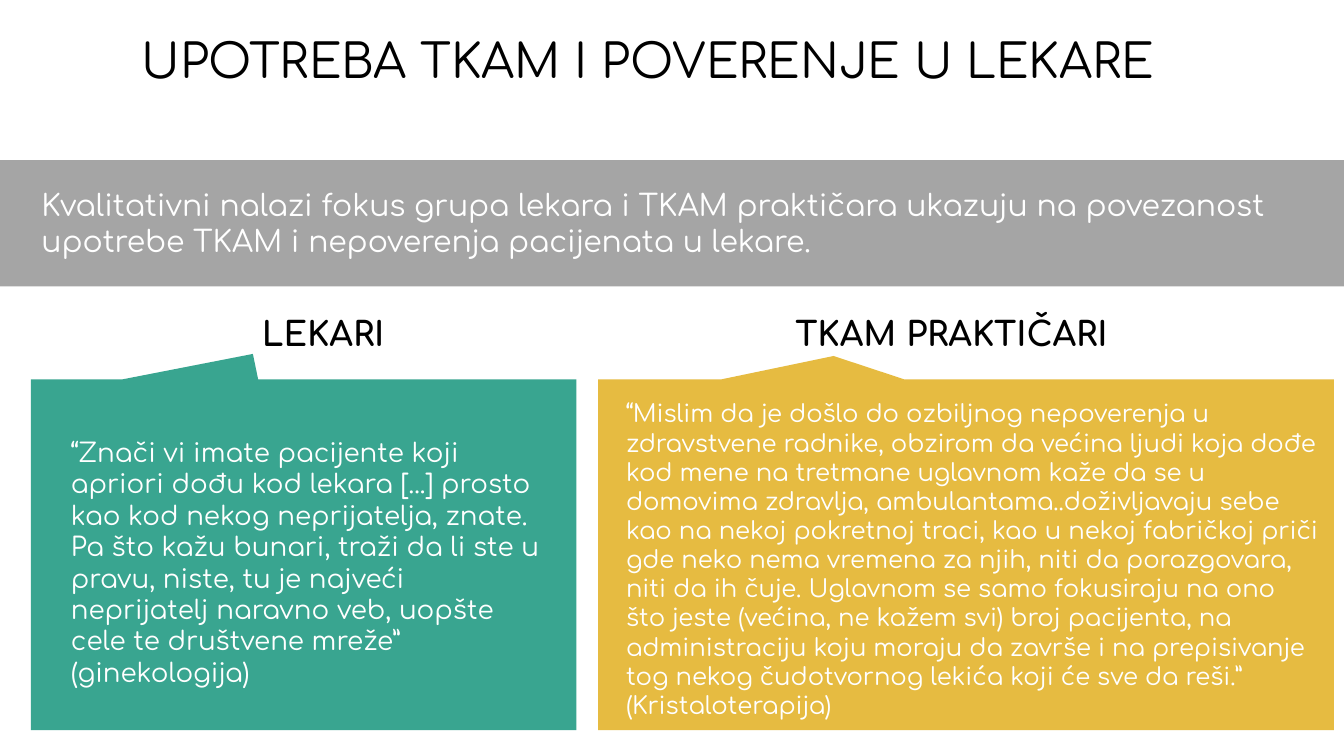
from pptx import Presentation, util as u
from pptx.dml.color import RGBColor
from pptx.enum import shapes, text

COLORS = {"ink": "000000", "paper": "FFFFFF", "band": "A5A5A5",
          "doctors": "39A590", "practitioners": "E6BB41"}

deck = Presentation()
deck.slide_width = u.Inches(10)
deck.slide_height = deck.slide_width * 9 // 16
column, row = deck.slide_width / 100, deck.slide_height / 100
slide = deck.slides.add_slide(deck.slide_layouts[6])


def add_panel(preset, area, color):
    left, top, width, height = area
    panel = slide.shapes.add_shape(preset, int(left * column), int(top * row),
                                   int(width * column), int(height * row))
    panel.shadow.inherit = False
    panel.fill.solid()
    panel.fill.fore_color.rgb = RGBColor.from_string(COLORS[color])
    panel.line.fill.background()
    return panel


def add_words(lines, area, size, color, bold=False, align=text.PP_ALIGN.LEFT):
    left, top, width, height = area
    words = slide.shapes.add_textbox(int(left * column), int(top * row),
                                     int(width * column), int(height * row))
    frame = words.text_frame
    frame.word_wrap = True
    frame.margin_left = frame.margin_right = u.Inches(0.1)
    frame.margin_top = frame.margin_bottom = u.Inches(0.1)
    frame.text = lines
    for paragraph in frame.paragraphs:
        paragraph.alignment = align
        for run in paragraph.runs:
            run.font.name = "Comfortaa"
            run.font.size = u.Pt(size)
            run.font.bold = bold
            run.font.color.rgb = RGBColor.from_string(COLORS[color])


add_words("UPOTREBA TKAM I POVERENJE U LEKARE", (9.55, 2.4, 93.2, 11.2), 25.2, "ink")

add_panel(shapes.MSO_SHAPE.RECTANGLE, (0, 21.2, 100, 16.7), "band")
add_words("Kvalitativni nalazi fokus grupa lekara i TKAM praktičara ukazuju na "
          "povezanost upotrebe TKAM i nepoverenja pacijenata u lekare.",
          (2.1, 22.9, 95.9, 13.2), 16, "paper")

doctors_quote = (
    "“Znači vi imate pacijente koji apriori dođu kod lekara [...] prosto kao kod "
    "nekog neprijatelja, znate. Pa što kažu bunari, traži da li ste u pravu, niste, "
    "tu je najveći neprijatelj naravno veb, uopšte cele te društvene mreže”\n"
    "(ginekologija)")
practitioners_quote = (
    "“Mislim da je došlo do ozbiljnog nepoverenja u zdravstvene radnike, obzirom da "
    "većina ljudi koja dođe kod mene na tretmane uglavnom kaže da se u domovima "
    "zdravlja, ambulantama..doživljavaju sebe kao na nekoj pokretnoj traci, kao u "
    "nekoj fabričkoj priči gde neko nema vremena za njih, niti da porazgovara, niti "
    "da ih čuje. Uglavnom se samo fokusiraju na ono što jeste (većina, ne kažem svi) "
    "broj pacijenta, na administraciju koju moraju da završe i na prepisivanje tog "
    "nekog čudotvornog lekića koji će sve da reši.” (Kristaloterapija)")

groups = [
    ("LEKARI", (17.1, 13.9), "doctors", (2.3, 40.6), (-0.093, -0.573),
     doctors_quote, (4.3, 55.95, 37, 37.2), 14),
    ("TKAM PRAKTIČARI", (52.75, 36.1), "practitioners", (44.5, 54.75), (-0.18, -0.567),
     practitioners_quote, (45.6, 50.95, 53.6, 46.4), 13),
]
for heading, (head_left, head_width), color, (left, width), tip, quote, area, size in groups:
    callout = add_panel(shapes.MSO_SHAPE.ROUNDED_RECTANGULAR_CALLOUT,
                        (left, 50.2, width, 46.4), color)
    for index, value in enumerate((*tip, 0)):
        callout.adjustments[index] = value
    add_words(quote, area, size, "paper")
    add_words(heading, (head_left, 39.65, head_width, 8.9), 18, "ink",
              bold=True, align=text.PP_ALIGN.CENTER)

deck.save("out.pptx")
